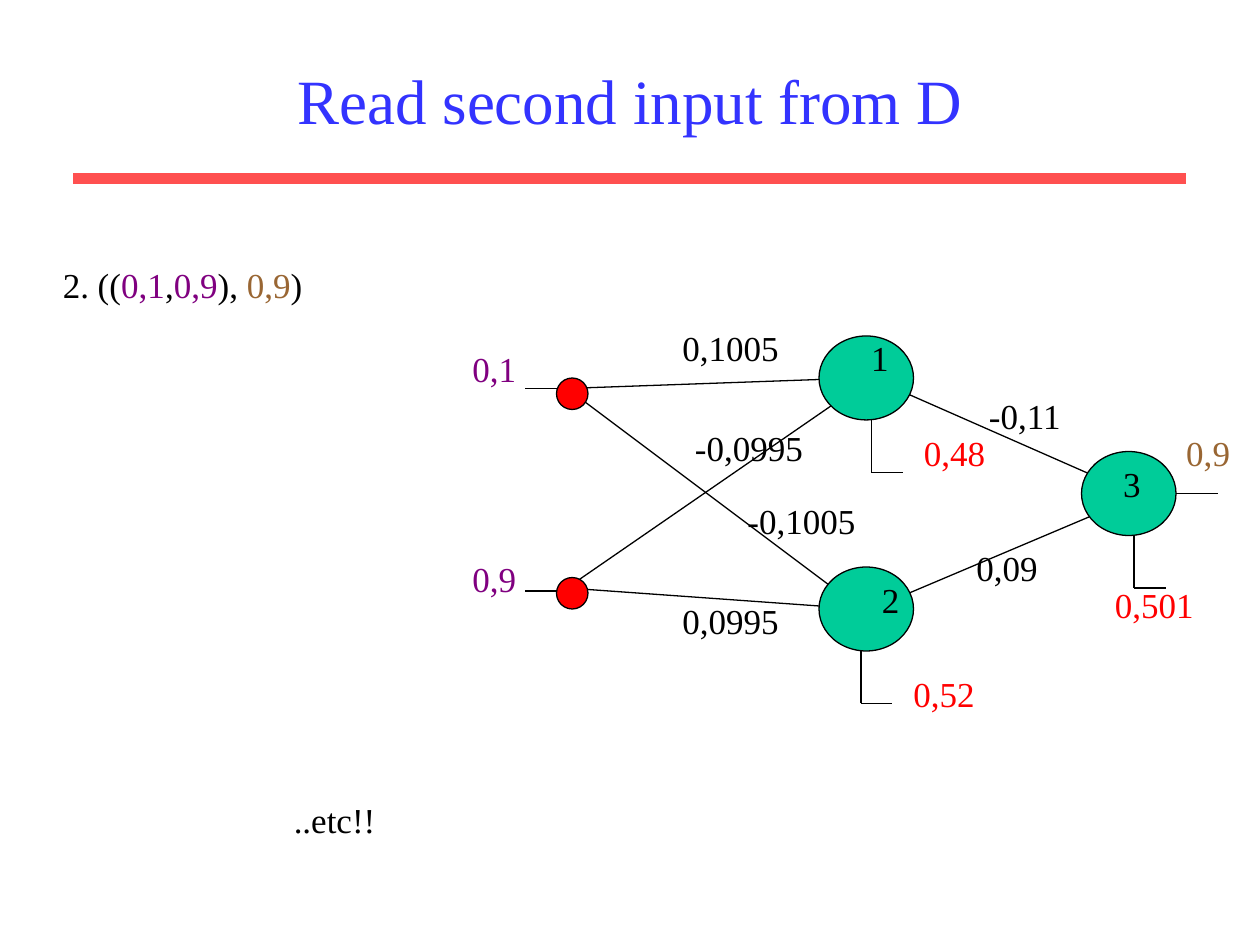
from lxml.etree import SubElement
from pptx import Presentation
from pptx.dml.color import RGBColor
from pptx.enum.shapes import MSO_CONNECTOR, MSO_SHAPE
from pptx.enum.text import MSO_ANCHOR, PP_ALIGN
from pptx.oxml.ns import qn
from pptx.util import Inches, Pt

COLORS = {
    "title": "3333FF", "rule": "FF5050", "ink": "000000", "input": "800080",
    "target": "996633", "output": "FF0000", "source": "FF0000", "neuron": "00CC99",
}
FONT = "Times New Roman"
CELLS_PER_INCH = 12


def grid(cells):
    return Inches(cells / CELLS_PER_INCH)


def rgb(role):
    return RGBColor.from_string(COLORS[role])


def format_run(run, role, size=20):
    run.font.name = FONT
    run.font.size = Pt(size)
    run.font.color.rgb = rgb(role)


def add_title(slide, wording):
    title = slide.shapes.title
    title.left, title.top, title.width, title.height = map(grid, (9, 3, 102, 13))
    title.text_frame.text = wording
    title.text_frame.vertical_anchor = MSO_ANCHOR.MIDDLE
    heading = title.text_frame.paragraphs[0]
    heading.alignment = PP_ALIGN.CENTER
    format_run(heading.runs[0], "title", 36)


def add_line(shapes, start, end, role="ink", weight=0.75):
    line = shapes.add_connector(MSO_CONNECTOR.STRAIGHT, *map(grid, start + end))
    line.line.color.rgb = rgb(role)
    line.line.width = Pt(weight)
    SubElement(line._element.spPr, qn("a:effectLst"))


def add_node(shapes, left, top, width, height, role):
    node = shapes.add_shape(MSO_SHAPE.OVAL, *map(grid, (left, top, width, height)))
    node.shadow.inherit = False
    node.fill.solid()
    node.fill.fore_color.rgb = rgb(role)
    node.line.color.rgb = rgb("ink")
    node.line.width = Pt(0.75)


def add_text(shapes, left, top, width, parts, height=6):
    box = shapes.add_textbox(*map(grid, (left, top, width, height)))
    box.text_frame.word_wrap = True
    paragraph = box.text_frame.paragraphs[0]
    paragraph.alignment = PP_ALIGN.LEFT
    for wording, role in parts:
        run = paragraph.add_run()
        run.text = wording
        format_run(run, role)


def add_value(shapes, left, top, value, role="ink"):
    width = 2.4 + sum(2.24 if char.isdigit() else 1.2 for char in value)
    add_text(shapes, left, top, width, [(value, role)])


def add_network(shapes):
    input_1, input_2 = (54, 37), (54, 56)
    hidden_1, hidden_2 = (83, 36), (82, 58)
    result = (108, 47)
    edges = [
        (input_1, (82, 36)), (input_1, hidden_2),
        (input_2, hidden_1), (input_2, hidden_2),
        (hidden_1, result), ((83, 58), (109, 47)), ((109, 47), (116, 47)),
        (input_1, (50, 37)), ((54, 56.3), (50, 56.3)),
    ]
    for start, end in edges:
        add_line(shapes, start, end)
    for column, row in (hidden_1, hidden_2, result):
        corner = (column, row + 9)
        add_line(shapes, (column, row), corner)
        add_line(shapes, corner, (column + 3, row + 9))

    for top in (36, 55):
        add_node(shapes, 53, top, 3, 3, "source")
    for left, top in ((78, 32), (78, 54), (103, 43)):
        add_node(shapes, left, top, 9, 8, "neuron")

    weights = [
        (63.8, 30.5, "0,1005"), (63.8, 56.5, "0,0995"),
        (70, 47, "-0,1005"), (65, 40, "-0,0995"),
        (93, 37, "-0,11"), (91.8, 51.5, "0,09"),
    ]
    numbers = [(81.8, 31.5, "1"), (82.8, 54.5, "2"), (105.8, 43.5, "3")]
    for left, top, value in weights + numbers:
        add_value(shapes, left, top, value)

    signals = [
        (43.8, 32.5, "0,1", "input"), (43.8, 52.5, "0,9", "input"),
        (111.8, 40.5, "0,9", "target"), (86.8, 40.5, "0,48", "output"),
        (85.8, 63.5, "0,52", "output"), (105, 55, "0,501", "output"),
    ]
    for left, top, value, role in signals:
        add_value(shapes, left, top, value, role)


def main():
    deck = Presentation()
    deck.slide_width, deck.slide_height = grid(120), grid(90)
    slide = deck.slides.add_slide(deck.slide_layouts[5])
    add_line(slide.shapes, (7, 17), (113, 17), "rule", 6)
    add_title(slide, "Read second input from D")
    add_text(slide.shapes, 4.8, 24.5, 32.2, [
        ("2. ((", "ink"), ("0,1", "input"), (",", "ink"), ("0,9", "input"),
        ("), ", "ink"), ("0,9", "target"), (")", "ink"),
    ])
    add_network(slide.shapes.add_group_shape().shapes)
    add_text(slide.shapes, 26.8, 75.5, 10.3, [("..etc!!", "ink")], 5.3)
    deck.save("out.pptx")


if __name__ == "__main__":
    main()
